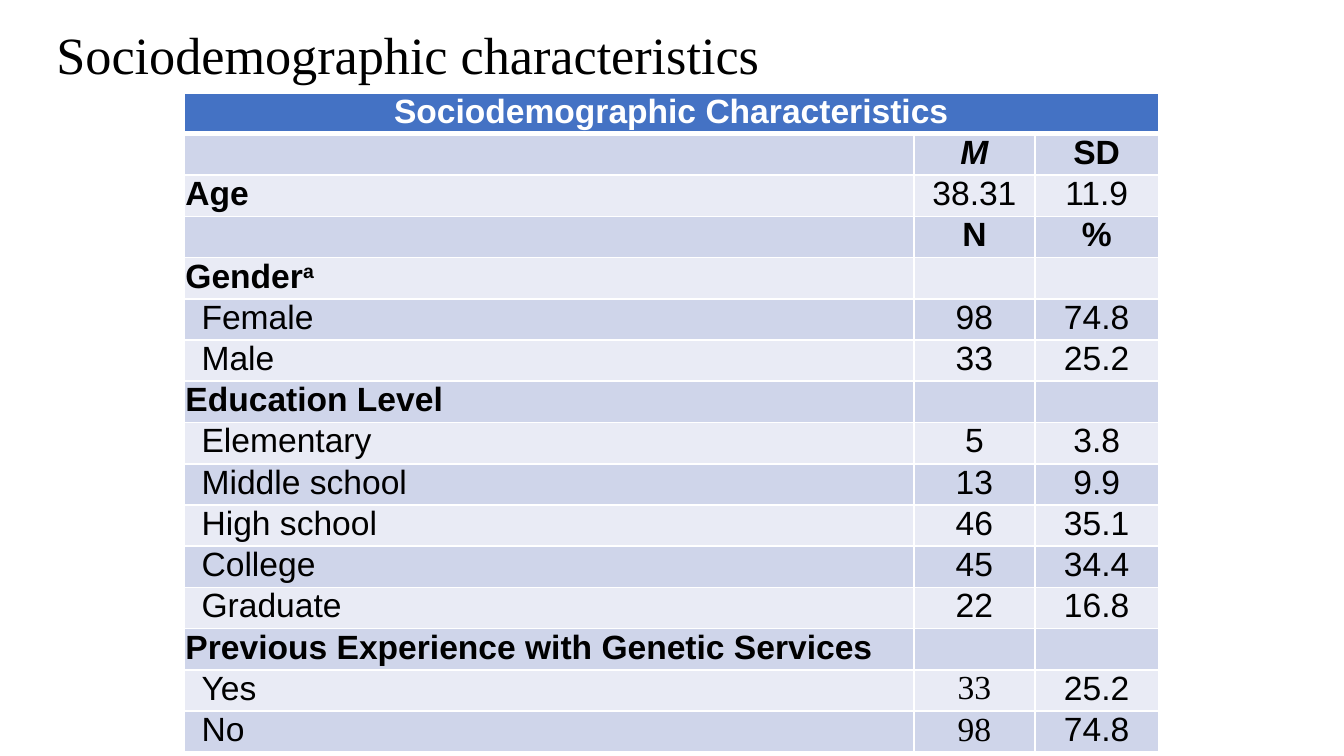
import pptx
import pptx.dml.color
import pptx.enum.text
import pptx.oxml.ns
import pptx.util
from lxml import etree
from pptx.util import Inches

RGBColor = pptx.dml.color.RGBColor
ALIGN = pptx.enum.text.PP_ALIGN
ANCHOR = pptx.enum.text.MSO_ANCHOR

BLACK = RGBColor(0x00, 0x00, 0x00)
WHITE = RGBColor(0xFF, 0xFF, 0xFF)
HEADER_BLUE = RGBColor(0x44, 0x72, 0xC4)
BANDS = (RGBColor(0xE9, 0xEB, 0xF5), RGBColor(0xCF, 0xD5, 0xEA))

SANS = "Arial"
SERIF = "Times New Roman"
COLUMN_WIDTHS = (5.43, 0.9, 0.92)
TABLE_HEIGHT = 4.91
LABEL_INDENT = 0.12

PLAIN = {"name": SANS, "size": pptx.util.Pt(18), "bold": False}
BOLD = {**PLAIN, "bold": True}
BOLD_ITALIC = {**BOLD, "italic": True}
SERIF_VALUE = {**PLAIN, "name": SERIF}
TITLE_FONT = {"name": SERIF, "size": pptx.util.Pt(28), "bold": False}
TITLE_FRAME = {
    "margin_left": Inches(0.07), "margin_right": Inches(0.07),
    "margin_top": Inches(0.04), "margin_bottom": Inches(0.04),
    "vertical_anchor": ANCHOR.BOTTOM, "word_wrap": True,
    "auto_size": pptx.enum.text.MSO_AUTO_SIZE.NONE,
}
CELL_FORMAT = {
    "margin_left": Inches(0.01), "margin_right": Inches(0.01),
    "margin_top": 0, "margin_bottom": 0, "vertical_anchor": ANCHOR.TOP,
}

HEADER = "Sociodemographic Characteristics"
ROWS = [
    ("", "M", "SD"),
    ("Age", "38.31", "11.9"),
    ("", "N", "%"),
    ("Gender", "", ""),
    ("Female", "98", "74.8"),
    ("Male", "33", "25.2"),
    ("Education Level", "", ""),
    ("Elementary", "5", "3.8"),
    ("Middle school", "13", "9.9"),
    ("High school", "46", "35.1"),
    ("College", "45", "34.4"),
    ("Graduate", "22", "16.8"),
    ("Previous Experience with Genetic Services", "", ""),
    ("Yes", "33", "25.2"),
    ("No", "98", "74.8"),
]
SERIF_COUNT_LABELS = ("Yes", "No")


def apply_format(target, values):
    for name, value in values.items():
        setattr(target, name, value)


def add_run(paragraph, text, font_format, color=BLACK):
    run = paragraph.add_run()
    run.text = text
    apply_format(run.font, font_format)
    run.font.color.rgb = color
    return run


def set_borders(cell, top, bottom):
    properties = cell._tc.get_or_add_tcPr()
    for side, width in (("L", 1), ("R", 1), ("T", top), ("B", bottom)):
        line = etree.SubElement(properties, pptx.oxml.ns.qn(f"a:ln{side}"),
                                w=str(pptx.util.Pt(width)))
        fill = etree.SubElement(line, pptx.oxml.ns.qn("a:solidFill"))
        etree.SubElement(fill, pptx.oxml.ns.qn("a:srgbClr"), val=str(WHITE))


def style_cell(cell, color, top=1, bottom=1):
    apply_format(cell, CELL_FORMAT)
    set_borders(cell, top, bottom)
    cell.fill.solid()
    cell.fill.fore_color.rgb = color


def add_title(slide, text):
    title = slide.shapes.title
    apply_format(title, {"left": Inches(0.35), "top": Inches(-0.49),
                         "width": Inches(9.02), "height": Inches(1.17)})
    apply_format(title.text_frame, TITLE_FRAME)
    paragraph = title.text_frame.paragraphs[0]
    apply_format(paragraph, {"alignment": ALIGN.LEFT, "line_spacing": 0.9})
    add_run(paragraph, text, TITLE_FONT)


def fill_label(cell, label, is_heading):
    paragraph = cell.text_frame.paragraphs[0]
    add_run(paragraph, label, BOLD if is_heading else PLAIN)
    if not is_heading:
        paragraph._p.get_or_add_pPr().set("marL", str(Inches(LABEL_INDENT)))
    if label == "Gender":
        marker = add_run(paragraph, "a", BOLD)
        marker._r.get_or_add_rPr().set("baseline", "30000")


def fill_value(cell, text, font_format, color=BLACK):
    paragraph = cell.text_frame.paragraphs[0]
    paragraph.alignment = ALIGN.CENTER
    add_run(paragraph, text, font_format, color)


def value_format(label, column, text):
    if text == "M":
        return BOLD_ITALIC
    if not label:
        return BOLD
    if column == 1 and label in SERIF_COUNT_LABELS:
        return SERIF_VALUE
    return PLAIN


def add_characteristics_table(slide):
    row_count = len(ROWS) + 1
    table = slide.shapes.add_table(
        row_count, len(COLUMN_WIDTHS), Inches(1.37), Inches(0.69),
        Inches(sum(COLUMN_WIDTHS)), Inches(TABLE_HEIGHT)).table
    for column, width in zip(table.columns, COLUMN_WIDTHS):
        column.width = Inches(width)
    for row in table.rows:
        row.height = Inches(TABLE_HEIGHT / row_count)

    for cell in table.rows[0].cells:
        style_cell(cell, HEADER_BLUE, bottom=3)
    table.cell(0, 0).merge(table.cell(0, len(COLUMN_WIDTHS) - 1))
    fill_value(table.cell(0, 0), HEADER, BOLD, WHITE)

    for row_index, texts in enumerate(ROWS, start=1):
        label = texts[0]
        is_heading = label == "Age" or not texts[1]
        for column, text in enumerate(texts):
            cell = table.cell(row_index, column)
            style_cell(cell, BANDS[row_index % 2], top=3 if row_index == 1 else 1)
            if text and column == 0:
                fill_label(cell, label, is_heading)
            elif text:
                fill_value(cell, text, value_format(label, column, text))


def main():
    presentation = pptx.Presentation()
    presentation.slide_width = Inches(10)
    presentation.slide_height = presentation.slide_width * 9 // 16
    slide = presentation.slides.add_slide(presentation.slide_layouts[5])
    add_title(slide, "Sociodemographic characteristics")
    add_characteristics_table(slide)
    presentation.save("out.pptx")


if __name__ == "__main__":
    main()
